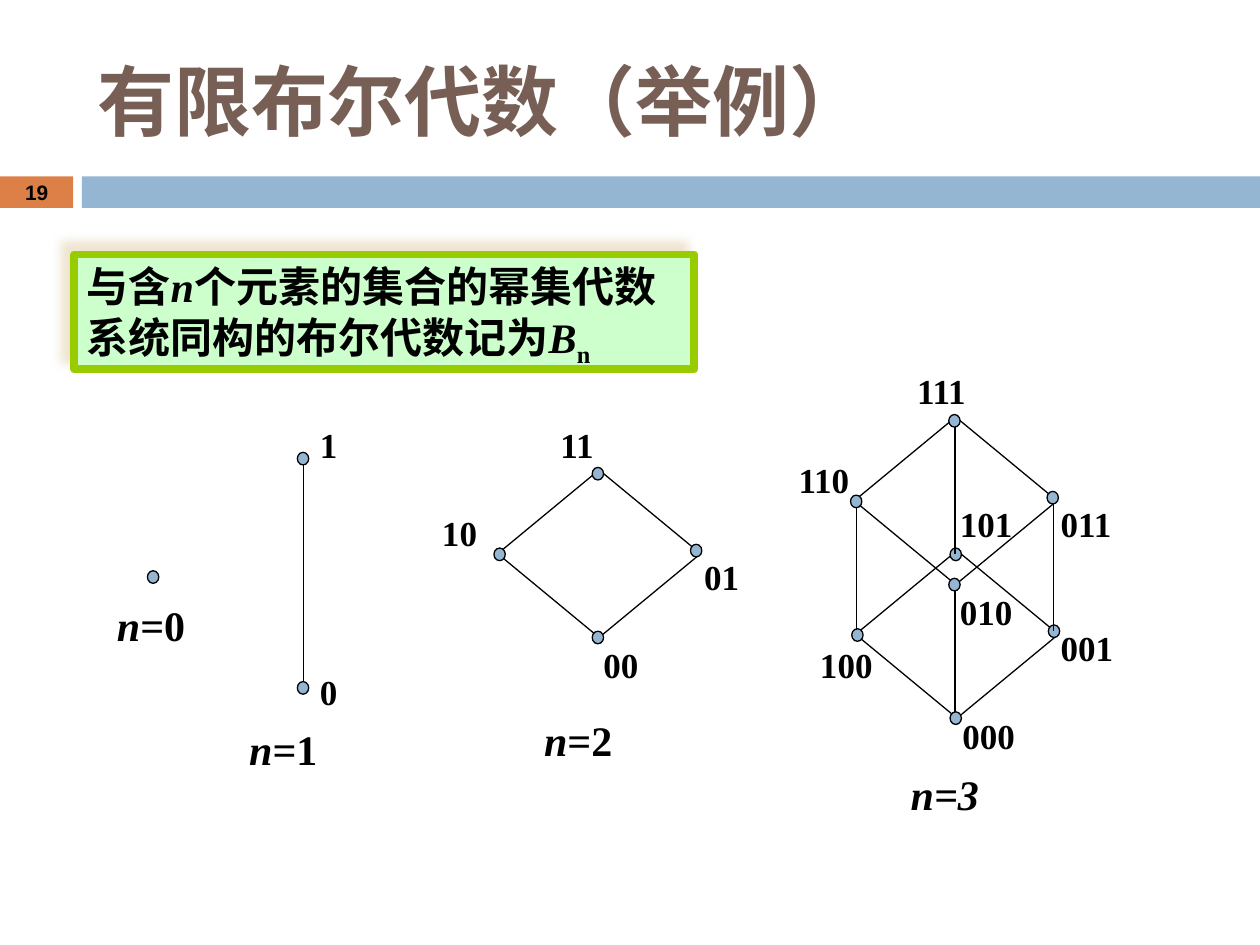
import pptx
import pptx.dml.color
import pptx.enum.shapes
import pptx.enum.text
import pptx.oxml
import pptx.oxml.ns
import pptx.util

Inches = pptx.util.Inches
Pt = pptx.util.Pt
RGB = pptx.dml.color.RGBColor
SHAPE = pptx.enum.shapes.MSO_SHAPE
ANCHOR = pptx.enum.text.MSO_ANCHOR
ALIGN = pptx.enum.text.PP_ALIGN
BLACK = RGB(0x00, 0x00, 0x00)
BLUE = RGB(0x94, 0xB6, 0xD2)
ORANGE = RGB(0xDD, 0x80, 0x47)
BROWN = RGB(0x77, 0x5F, 0x55)
MINT = RGB(0xCC, 0xFF, 0xCC)
GREEN = RGB(0x99, 0xCC, 0x00)
SERIF = "Times New Roman"

DIAMOND_SIZE = (1.61, 1.33)
DOT_SIZE = (0.09, 0.1)
DIAMOND_DOTS = [(0.75, -0.02), (-0.03, 0.62), (1.53, 0.59), (0.75, 1.28)]
SINGLE_DOTS = [(2.36, 3.59), (1.17, 4.53), (2.36, 5.41)]
LOWER_EDGES = [(2.41, 3.64, 5.47), (7.58, 4.64, 5.72)]
UPPER_EDGES = [(8.36, 3.96, 5.01), (6.8, 3.99, 5), (7.58, 3.34, 4.4)]
LABELS = [
    ("1", 2.44, 3.31), ("0", 2.44, 5.27),
    ("11", 4.35, 3.31), ("10", 3.41, 4.01), ("01", 5.49, 4.36), ("00", 4.69, 5.06),
    ("111", 7.18, 2.88), ("110", 6.24, 3.59), ("011", 8.32, 3.94), ("101", 7.52, 3.94),
    ("010", 7.52, 4.64), ("100", 6.41, 5.06), ("001", 8.32, 4.92), ("000", 7.54, 5.62),
]
CAPTIONS = [
    ([("n", True), ("=0", False)], 0.83, 4.71),
    ([("n", True), ("=1", False)], 1.88, 5.69),
    ([("n", True), ("=2", False)], 4.22, 5.62),
    ([("n=3", True)], 7.13, 6.05),
]


def add_run(p, text, size, font=SERIF, color=BLACK, italic=False):
    r = p.add_run()
    r.text = text
    r.font.size = Pt(size)
    r.font.name = font
    r.font.bold = True
    r.font.italic = italic
    r.font.color.rgb = color
    return r


def add_shape(s, kind, x, y, w, h, fill=None, line=None, width=0.75):
    sp = s.shapes.add_shape(kind, Inches(x), Inches(y), Inches(w), Inches(h))
    sp.shadow.inherit = False
    if fill is None:
        sp.fill.background()
    else:
        sp.fill.solid()
        sp.fill.fore_color.rgb = fill
    if line is None:
        sp.line.fill.background()
    else:
        sp.line.color.rgb = line
        sp.line.width = Pt(width)
    return sp


def add_dot(s, x, y):
    add_shape(s, SHAPE.OVAL, x, y, *DOT_SIZE, BLUE, BLACK)


def add_diamond(s, x, y):
    add_shape(s, SHAPE.DIAMOND, x, y, *DIAMOND_SIZE, line=BLACK)
    for dx, dy in DIAMOND_DOTS:
        add_dot(s, x + dx, y + dy)


def add_edge(s, x, top, bottom):
    c = s.shapes.add_connector(pptx.enum.shapes.MSO_CONNECTOR.STRAIGHT,
                               Inches(x), Inches(top), Inches(x), Inches(bottom))
    c.line.color.rgb = BLACK
    c.line.width = Pt(0.75)
    c._element.spPr.append(pptx.oxml.parse_xml(
        f'<a:effectLst {pptx.oxml.ns.nsdecls("a")}/>'))


def add_text(s, runs, x, y, w, h, size):
    tf = s.shapes.add_textbox(Inches(x), Inches(y), Inches(w), Inches(h)).text_frame
    tf.word_wrap = True
    for text, italic in runs:
        add_run(tf.paragraphs[0], text, size, italic=italic)


def add_title(s, text):
    sp = s.shapes.title
    sp.left, sp.top, sp.width, sp.height = map(Inches, (0.67, 0.25, 8.92, 1.08))
    tf = sp.text_frame
    tf.auto_size = pptx.enum.text.MSO_AUTO_SIZE.NONE
    tf.vertical_anchor = ANCHOR.MIDDLE
    p = tf.paragraphs[0]
    p.alignment = ALIGN.LEFT
    add_run(p, text, 44, "Calibri", BROWN)


def add_band(s, number):
    sp = add_shape(s, SHAPE.RECTANGLE, 0, 1.4, 0.58, 0.25, ORANGE)
    add_shape(s, SHAPE.RECTANGLE, 0.65, 1.4, 9.35, 0.25, BLUE)
    tf = sp.text_frame
    tf.margin_top = tf.margin_bottom = 0
    tf.vertical_anchor = ANCHOR.MIDDLE
    p = tf.paragraphs[0]
    p.alignment = ALIGN.CENTER
    add_run(p, number, 11.9, "Arial")


def add_definition(s):
    sp = add_shape(s, SHAPE.RECTANGLE, 0.59, 2.02, 4.92, 0.91, MINT, GREEN, 4.5)
    effects = sp._element.spPr.find(pptx.oxml.ns.qn("a:effectLst"))
    effects.append(pptx.oxml.parse_xml(
        f'<a:outerShdw {pptx.oxml.ns.nsdecls("a")} blurRad="{Pt(5)}" dist="{Pt(8.5)}" '
        'dir="13500000" algn="ctr" rotWithShape="0"><a:srgbClr val="EBDDC3">'
        '<a:alpha val="75000"/></a:srgbClr></a:outerShdw>'))
    tf = sp.text_frame
    tf.word_wrap = True
    tf.vertical_anchor = ANCHOR.TOP
    p = tf.paragraphs[0]
    p.alignment = ALIGN.LEFT
    add_run(p, "与含", 24)
    add_run(p, "n", 24, italic=True)
    add_run(p, "个元素的集合的幂集代数系统同构的布尔代数记为", 24)
    add_run(p, "B", 24, italic=True)
    r = add_run(p, "n", 24)
    r.font._element.set("baseline", "-25000")


def main():
    """Build the slide on finite Boolean algebras."""
    prs = pptx.Presentation()
    prs.slide_width, prs.slide_height = Inches(10), Inches(7.5)
    s = prs.slides.add_slide(prs.slide_layouts[5])
    add_title(s, "有限布尔代数（举例）")
    add_band(s, "19")
    for edge in LOWER_EDGES:
        add_edge(s, *edge)
    add_diamond(s, 6.79, 4.37)
    for edge in UPPER_EDGES:
        add_edge(s, *edge)
    add_diamond(s, 6.78, 3.31)
    add_diamond(s, 3.95, 3.73)
    for x, y in SINGLE_DOTS:
        add_dot(s, x, y)
    for text, x, y in LABELS:
        add_text(s, [(text, False)], x, y, 0.7, 0.43, 20)
    for runs, x, y in CAPTIONS:
        add_text(s, runs, x, y, 1.1, 0.5, 24)
    add_definition(s)
    prs.save("out.pptx")


if __name__ == "__main__":
    main()
